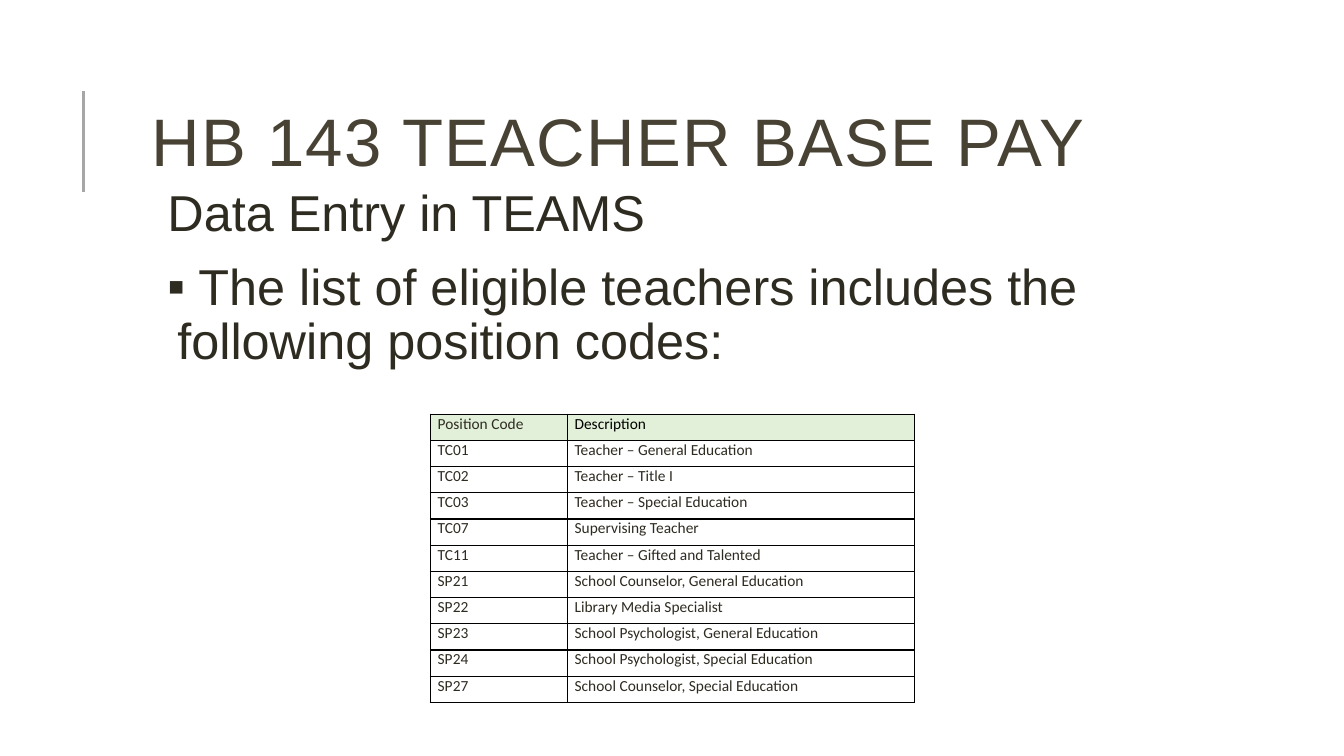
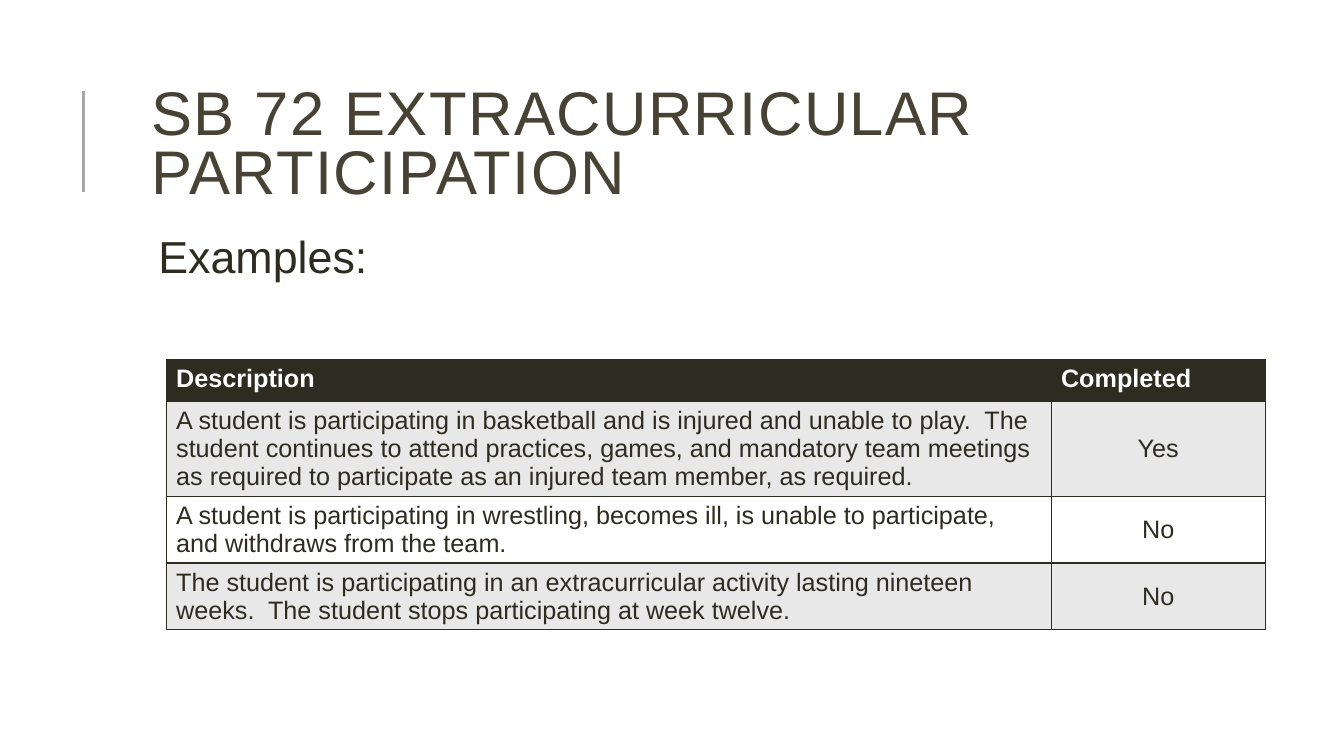
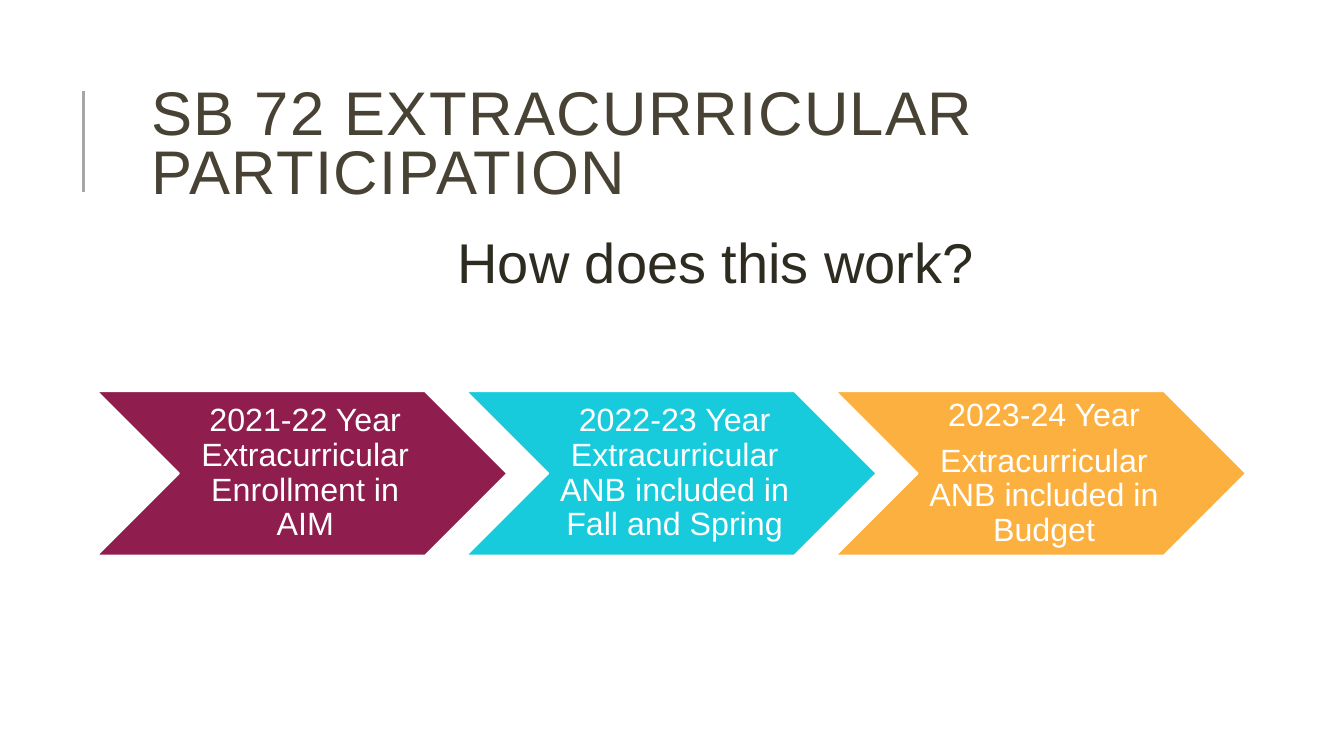
from dataclasses import dataclass
from typing import Any

from lxml.etree import SubElement
from pptx import Presentation
from pptx.dml.color import RGBColor
from pptx.enum.shapes import MSO_CONNECTOR, MSO_SHAPE
from pptx.enum.text import MSO_ANCHOR, MSO_AUTO_SIZE, PP_ALIGN
from pptx.oxml.ns import qn
from pptx.util import Cm, Pt


@dataclass(frozen=True)
class Theme:
    font: str = "Arial"
    grid_font: str = "Calibri"
    ink: str = "2E2B21"
    title: str = "474233"
    rule: str = "A6A6A6"
    white: str = "FFFFFF"
    black: str = "000000"
    mint: str = "E2EFD9"
    grey: str = "E8E8E8"
    plum: str = "8F1D4D"
    cyan: str = "17CBDC"
    gold: str = "FBB040"
    pay_title: int = 48
    sport_title: int = 44
    list_size: int = 36
    case_lead: int = 32
    flow_lead: int = 40
    code_size: int = 11
    case_size: int = 18
    step_size: int = 23


THEME = Theme()


@dataclass(frozen=True)
class Box:
    """A place on the slide, in centimetres."""
    left: float
    top: float
    width: float
    height: float


@dataclass(frozen=True)
class Line:
    """A body paragraph."""
    text: str
    size: int
    align: PP_ALIGN = PP_ALIGN.LEFT
    bullet: str = ""


@dataclass(frozen=True)
class Grid:
    """The look of a table."""
    left: float
    top: float
    cols: tuple[float, ...]
    row: float
    size: int
    font: str
    edge: str
    heads: tuple[str, ...]
    head_fill: str
    bands: tuple[str, ...]
    bold: bool = False
    mid_last: bool = False
    pad: tuple[float, float] = (0.25, 0.13)


@dataclass(frozen=True)
class Step:
    fill: str
    texts: tuple[str, ...]


TITLE_BOX = Box(3.56, 1.63, 27, 4.17)
WIDE_BODY = Box(3.86, 5.79, 28.35, 10.03)
LIST_BODY = Box(4.09, 4.6, 27, 11.18)
FIRST_STEP = Box(2.44, 9.86, 10.34, 4.14)
STEP_PITCH = 9.31

CODE_GRID = Grid(10.85, 10.44, (3.45, 8.74), 0.66, THEME.code_size,
                 THEME.grid_font, THEME.black, (THEME.ink, THEME.black),
                 THEME.mint, ("",), pad=(0.18, 0))
CASE_GRID = Grid(4.19, 9.07, (22.3, 5.4), 1.04, THEME.case_size,
                 THEME.font, THEME.ink, (THEME.white, THEME.white),
                 THEME.ink, (THEME.grey, THEME.white), True, True)

CODES = (
    ("Position Code", "Description"),
    ("TC01", "Teacher – General Education"),
    ("TC02", "Teacher – Title I"),
    ("TC03", "Teacher – Special Education"),
    ("TC07", "Supervising Teacher"),
    ("TC11", "Teacher – Gifted and Talented"),
    ("SP21", "School Counselor, General Education"),
    ("SP22", "Library Media Specialist"),
    ("SP23", "School Psychologist, General Education"),
    ("SP24", "School Psychologist, Special Education"),
    ("SP27", "School Counselor, Special Education"),
)
CASES = (
    ("Description", "Completed"),
    ("A student is participating in basketball and is injured and unable to "
     "play.  The student continues to attend practices, games, and mandatory "
     "team meetings as required to participate as an injured team member, "
     "as required.", "Yes"),
    ("A student is participating in wrestling, becomes ill, is unable to "
     "participate, and withdraws from the team.", "No"),
    ("The student is participating in an extracurricular activity lasting "
     "nineteen weeks.  The student stops participating at week twelve.", "No"),
)
STEPS = (
    Step(THEME.plum, ("2021-22 Year Extracurricular Enrollment in AIM",)),
    Step(THEME.cyan, ("2022-23 Year Extracurricular ANB included in Fall and "
                      "Spring",)),
    Step(THEME.gold, ("2023-24 Year",
                      "Extracurricular ANB included in Budget")),
)


def put(thing: Any, **values: Any) -> None:
    for name, value in values.items():
        setattr(thing, name, value)


def place(shape: Any, box: Box) -> None:
    put(shape, left=Cm(box.left), top=Cm(box.top),
        width=Cm(box.width), height=Cm(box.height))


def paint(fill: Any, tint: str) -> None:
    """Fill with a colour, or with nothing if none is given."""
    if tint:
        fill.solid()
        fill.fore_color.rgb = RGBColor.from_string(tint)
    else:
        fill.background()


def write(para: Any, text: str, size: int, tint: str,
          font: str = THEME.font, bold: bool = False) -> Any:
    run = para.add_run()
    run.text = text
    put(run.font, size=Pt(size), name=font, bold=bold)
    run.font.color.rgb = RGBColor.from_string(tint)
    return run


def set_bullet(para: Any, mark: str) -> None:
    props = para._p.get_or_add_pPr()
    hang = Cm(0.25) if mark else 0
    props.set("marL", str(int(hang)))
    props.set("indent", str(-int(hang)))
    if mark:
        SubElement(props, qn("a:buChar")).set("char", mark)
    else:
        SubElement(props, qn("a:buNone"))


def set_edges(cell: Any, tint: str) -> None:
    props = cell._tc.get_or_add_tcPr()
    for side in ("lnL", "lnR", "lnT", "lnB"):
        edge = SubElement(props, qn(f"a:{side}"), w=str(int(Pt(1))))
        fill = SubElement(edge, qn("a:solidFill"))
        SubElement(fill, qn("a:srgbClr"), val=tint)


def add_rule(slide: Any, layout: Any) -> None:
    """Draw the title's side rule and hand it to the layout."""
    rule = slide.shapes.add_connector(
        MSO_CONNECTOR.STRAIGHT, Cm(2.11), Cm(4.83), Cm(2.11), Cm(2.29))
    rule.line.width = Pt(1.75)
    rule.line.color.rgb = RGBColor.from_string(THEME.rule)
    SubElement(rule.element.spPr, qn("a:effectLst"))
    layout.shapes.element.append(rule.element)


def add_slide(deck: Any, title: str, size: int, area: Box,
              lines: tuple[Line, ...]) -> Any:
    slide = deck.slides.add_slide(deck.slide_layouts[1])
    head, body = slide.placeholders
    place(head, TITLE_BOX)
    put(head.text_frame, auto_size=MSO_AUTO_SIZE.NONE,
        vertical_anchor=MSO_ANCHOR.MIDDLE)
    para = head.text_frame.paragraphs[0]
    put(para, alignment=PP_ALIGN.LEFT, line_spacing=0.8)
    run = write(para, title, size, THEME.title)
    run._r.get_or_add_rPr().set("spc", "100")

    place(body, area)
    frame = body.text_frame
    pad = Cm(0.13)
    put(frame, auto_size=MSO_AUTO_SIZE.NONE, margin_left=pad,
        margin_right=pad, margin_top=pad, margin_bottom=pad)
    for num, line in enumerate(lines):
        para = frame.add_paragraph() if num else frame.paragraphs[0]
        set_bullet(para, line.bullet)
        put(para, alignment=line.align, line_spacing=0.9,
            space_before=Pt(12 if num else 0), space_after=Pt(2))
        write(para, line.text, line.size, THEME.ink)
    return slide


def add_grid(slide: Any, grid: Grid, rows: tuple[tuple[str, ...], ...]) -> None:
    table = slide.shapes.add_table(
        len(rows), len(grid.cols), Cm(grid.left), Cm(grid.top),
        Cm(sum(grid.cols)), Cm(grid.row * len(rows))).table
    table.horz_banding = False
    for col, width in zip(table.columns, grid.cols):
        col.width = Cm(width)
    side, edge = map(Cm, grid.pad)
    for y, row in enumerate(rows):
        for x, text in enumerate(row):
            cell = table.cell(y, x)
            put(cell, margin_left=side, margin_right=side,
                margin_top=edge, margin_bottom=edge)
            set_edges(cell, grid.edge)
            paint(cell.fill, grid.bands[(y - 1) % len(grid.bands)]
                  if y else grid.head_fill)
            para = cell.text_frame.paragraphs[0]
            if grid.mid_last and y and x == len(row) - 1:
                cell.vertical_anchor = MSO_ANCHOR.MIDDLE
                para.alignment = PP_ALIGN.CENTER
            write(para, text, grid.size, THEME.ink if y else grid.heads[x],
                  grid.font, grid.bold and not y)


def add_step(slide: Any, step: Step, num: int) -> None:
    box = FIRST_STEP
    shape = slide.shapes.add_shape(
        MSO_SHAPE.CHEVRON, Cm(box.left + num * STEP_PITCH), Cm(box.top),
        Cm(box.width), Cm(box.height))
    shape.shadow.inherit = False
    paint(shape.fill, step.fill)
    paint(shape.line.fill, THEME.white)
    shape.line.width = Pt(1.25)
    frame = shape.text_frame
    pad = Cm(0.08)
    put(frame, word_wrap=True, vertical_anchor=MSO_ANCHOR.MIDDLE,
        margin_left=Cm(0.25), margin_right=pad, margin_top=pad,
        margin_bottom=pad)
    for row, text in enumerate(step.texts):
        para = frame.add_paragraph() if row else frame.paragraphs[0]
        put(para, alignment=PP_ALIGN.CENTER, line_spacing=0.9,
            space_after=Pt(8))
        write(para, text, THEME.step_size, THEME.white)


def main() -> None:
    deck = Presentation()
    put(deck, slide_width=Cm(33.87), slide_height=Cm(19.05))

    pay = add_slide(deck, "HB 143 TEACHER BASE PAY", THEME.pay_title,
                    LIST_BODY, (
        Line("Data Entry in TEAMS", THEME.list_size),
        Line(" The list of eligible teachers includes the following "
             "position codes:", THEME.list_size, bullet="▪")))
    add_rule(pay, deck.slide_layouts[1])
    add_grid(pay, CODE_GRID, CODES)

    sport = "SB 72 EXTRACURRICULAR PARTICIPATION"
    cases = add_slide(deck, sport, THEME.sport_title, WIDE_BODY, (
        Line("Examples:", THEME.case_lead),))
    add_grid(cases, CASE_GRID, CASES)

    flow = add_slide(deck, sport, THEME.sport_title, WIDE_BODY, (
        Line("How does this work?", THEME.flow_lead, PP_ALIGN.CENTER),))
    for num, step in enumerate(STEPS):
        add_step(flow, step, num)

    deck.save("out.pptx")


if __name__ == "__main__":
    main()
